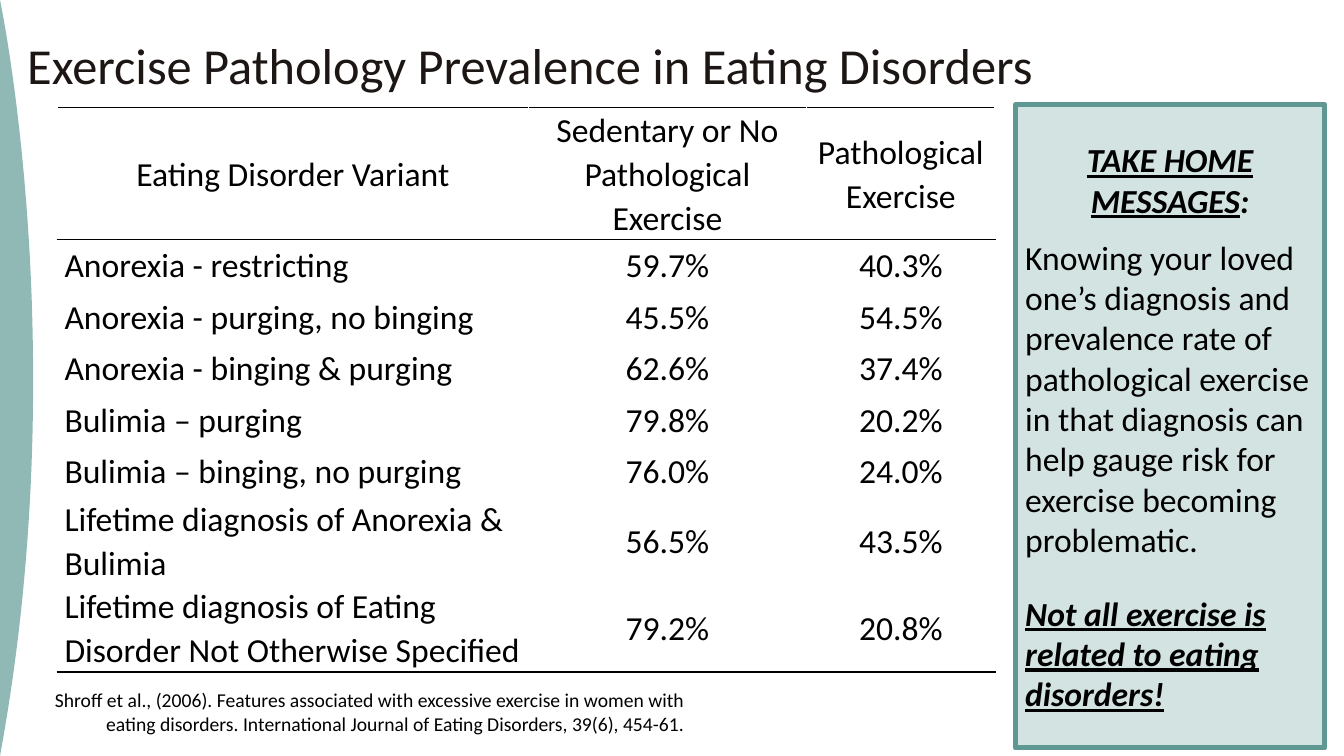
from lxml import etree
from pptx import Presentation
from pptx.dml.color import RGBColor
from pptx.enum.shapes import MSO_SHAPE
from pptx.enum.text import MSO_ANCHOR, MSO_AUTO_SIZE, PP_ALIGN
from pptx.oxml.ns import qn
from pptx.util import Inches, Pt

RECTANGLE = MSO_SHAPE.RECTANGLE
TOP, MIDDLE = MSO_ANCHOR.TOP, MSO_ANCHOR.MIDDLE
NO_AUTOSIZE = MSO_AUTO_SIZE.NONE
LEFT, CENTER, RIGHT = PP_ALIGN.LEFT, PP_ALIGN.CENTER, PP_ALIGN.RIGHT

COLORS = {
    "text": "000000",
    "title": "1C1715",
    "curve": "90B9B5",
    "panel": "D3E3E1",
    "panel_line": "5F9792",
}

TABLE_ROWS = [
    ("Eating Disorder Variant", "Sedentary or No Pathological Exercise", "Pathological Exercise"),
    ("Anorexia - restricting", "59.7%", "40.3%"),
    ("Anorexia - purging, no binging", "45.5%", "54.5%"),
    ("Anorexia - binging & purging", "62.6%", "37.4%"),
    ("Bulimia – purging", "79.8%", "20.2%"),
    ("Bulimia – binging, no purging", "76.0%", "24.0%"),
    ("Lifetime diagnosis of Anorexia & Bulimia", "56.5%", "43.5%"),
    ("Lifetime diagnosis of Eating Disorder Not Otherwise Specified", "79.2%", "20.8%"),
]
COLUMN_WIDTHS = [4.67, 2.76, 1.87]
ROW_HEIGHTS = [1.04] + [0.51] * 6 + [0.74]

# Each paragraph: space before in points, alignment, spans of (text, emphasis, underline)
MESSAGES = [
    (0, CENTER, [("TAKE HOME MESSAGES", True, True), (":", True, False)]),
    (12, LEFT, [("Knowing your loved one’s diagnosis and prevalence rate of pathological "
                 "exercise in that diagnosis can help gauge risk for exercise becoming "
                 "problematic.", False, False)]),
    (24, LEFT, [("Not all exercise is related to eating disorders!", True, True)]),
]


def rgb(name):
    return RGBColor.from_string(COLORS[name])


class SlideBuilder:
    font_name = "Calibri"
    body_size = 24

    def __init__(self, page):
        self.page = page

    def style(self, font, size, color="text", emphasis=False, underline=False):
        font.name, font.size, font.color.rgb = self.font_name, Pt(size), rgb(color)
        font.bold = font.italic = emphasis
        font.underline = underline

    def title(self, text, left, top, width, height):
        box = self.page.shapes.title
        box.left, box.top = Inches(left), Inches(top)
        box.width, box.height = Inches(width), Inches(height)
        frame = box.text_frame
        frame.text = text
        frame.auto_size, frame.vertical_anchor = NO_AUTOSIZE, TOP
        para = frame.paragraphs[0]
        para.alignment, para.line_spacing = LEFT, 0.9
        self.style(para.runs[0].font, 36, "title")

    def edge_curve(self, height, pull_x, pull_y, steps=60):
        """Bulge on the left edge: a cubic curve from the bottom corner to the top one."""
        points = []
        for step in range(1, steps + 1):
            t = step / steps
            pull = 3 * (1 - t) ** 2 * t
            points.append((Inches(pull * pull_x), Inches((1 - t) ** 3 * height + pull * pull_y)))
        builder = self.page.shapes.build_freeform(0, 0)
        builder.add_line_segments([(0, Inches(height))] + points, close=True)
        curve = builder.convert_to_shape()
        curve.shadow.inherit = False
        curve.fill.solid()
        curve.fill.fore_color.rgb = rgb("curve")
        curve.line.fill.background()
        self.page.shapes.title.element.addprevious(curve.element)

    def cell_border(self, cell, side):
        properties = cell._tc.get_or_add_tcPr()
        line = etree.SubElement(properties, qn("a:" + side), w=str(Pt(1)))
        fill = etree.SubElement(line, qn("a:solidFill"))
        etree.SubElement(fill, qn("a:srgbClr"), val=COLORS["text"])

    def table(self, rows, left, top, widths, heights):
        grid = self.page.shapes.add_table(
            len(rows), len(widths), Inches(left), Inches(top),
            Inches(sum(widths)), Inches(sum(heights))).table
        grid.first_row = grid.horz_banding = False
        for column, width in zip(grid.columns, widths):
            column.width = Inches(width)
        for row, height in zip(grid.rows, heights):
            row.height = Inches(height)
        for i, texts in enumerate(rows):
            for j, text in enumerate(texts):
                cell = grid.cell(i, j)
                if i in (0, 1):
                    self.cell_border(cell, "lnT")
                if i in (0, len(rows) - 1):
                    self.cell_border(cell, "lnB")
                cell.fill.background()
                cell.vertical_anchor = MIDDLE
                cell.margin_left = cell.margin_right = Inches(0.07)
                cell.margin_top = cell.margin_bottom = 0
                cell.text = text
                para = cell.text_frame.paragraphs[0]
                para.alignment = LEFT if i and j == 0 else CENTER
                para.line_spacing = 1.07
                self.style(para.runs[0].font, self.body_size)

    def citation(self, text, left, top, width, height):
        frame = self.page.shapes.add_textbox(
            Inches(left), Inches(top), Inches(width), Inches(height)).text_frame
        frame.word_wrap = True
        frame.text = text
        para = frame.paragraphs[0]
        para.alignment = RIGHT
        self.style(para.runs[0].font, 14)

    def panel(self, messages, left, top, width, height):
        box = self.page.shapes.add_shape(
            RECTANGLE, Inches(left), Inches(top), Inches(width), Inches(height))
        box.shadow.inherit = False
        box.fill.solid()
        box.fill.fore_color.rgb = rgb("panel")
        box.line.color.rgb, box.line.width = rgb("panel_line"), Pt(3.5)
        frame = box.text_frame
        frame.word_wrap, frame.vertical_anchor = True, MIDDLE
        for i, (space, alignment, spans) in enumerate(messages):
            para = frame.add_paragraph() if i else frame.paragraphs[0]
            para.alignment, para.space_before = alignment, Pt(space)
            for text, emphasis, underline in spans:
                span = para.add_run()
                span.text = text
                self.style(span.font, self.body_size, "text", emphasis, underline)


def main():
    deck = Presentation()
    deck.slide_width, deck.slide_height = Inches(13.33), Inches(7.5)
    slide = SlideBuilder(deck.slides.add_slide(deck.slide_layouts[5]))

    # Title and edge decoration
    slide.title("Exercise Pathology Prevalence in Eating Disorders", 0.17, 0.36, 11.78, 1.29)
    slide.edge_curve(7.5, 0.74, 3.49)

    # Prevalence table with its source
    slide.table(TABLE_ROWS, 0.57, 1.07, COLUMN_WIDTHS, ROW_HEIGHTS)
    slide.citation(
        "Shroff et al., (2006). Features associated with excessive exercise in women with "
        "eating disorders. International Journal of Eating Disorders, 39(6), 454-61.",
        0.33, 6.78, 6.56, 0.72)

    # Take-home panel
    slide.panel(MESSAGES, 10.07, 1.04, 3.07, 6.38)

    deck.save("out.pptx")


if __name__ == "__main__":
    main()
